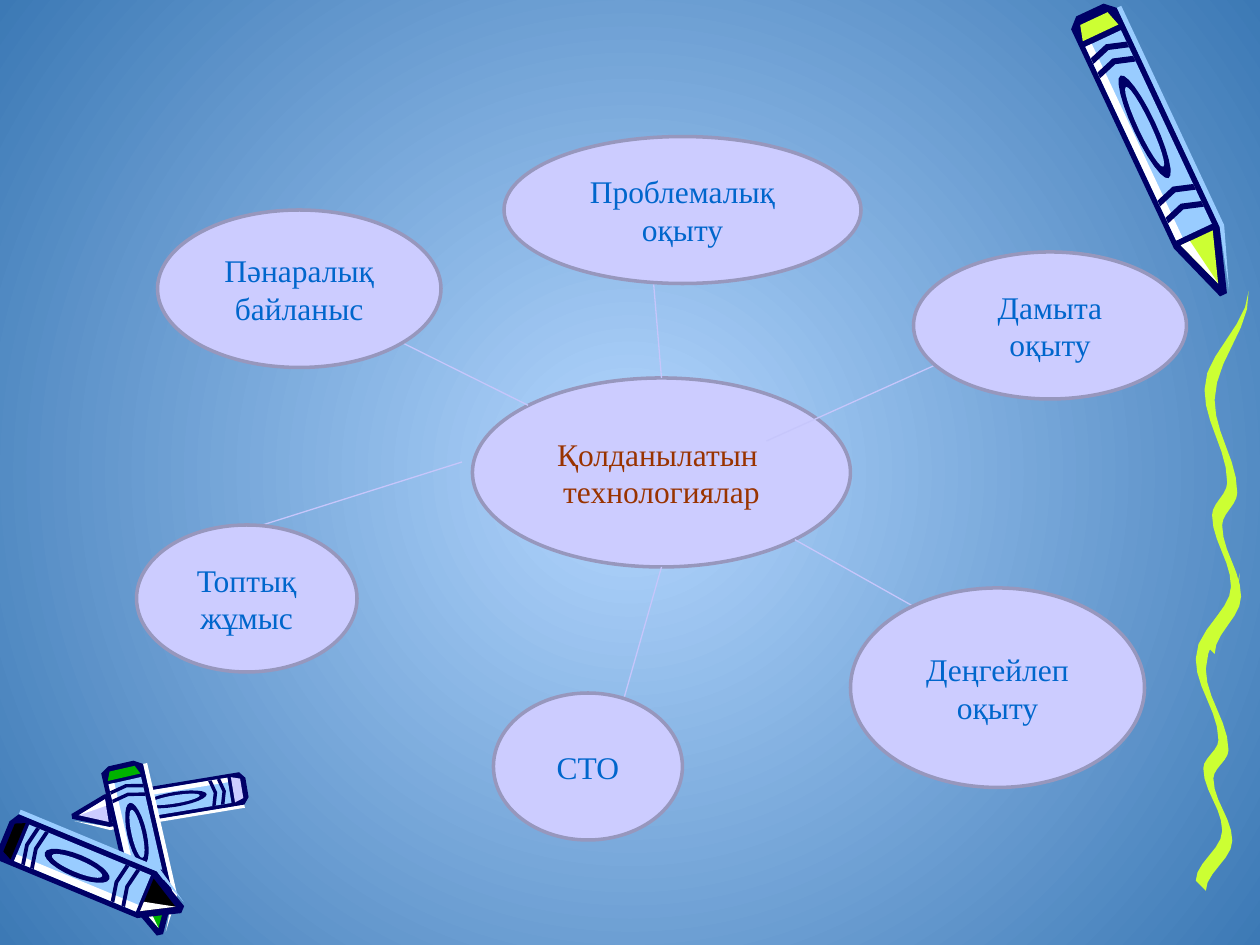
from math import cos, hypot, pi, sin

from lxml import etree
from pptx import Presentation
from pptx.dml.color import RGBColor
from pptx.enum.shapes import MSO_CONNECTOR, MSO_SHAPE
from pptx.enum.text import MSO_ANCHOR, PP_ALIGN
from pptx.oxml.ns import qn
from pptx.util import Inches, Pt

SKY_LIGHT = RGBColor(0xB4, 0xD7, 0xFF)
SKY_DARK = RGBColor(0x3C, 0x79, 0xB5)
LILAC = RGBColor(0xCC, 0xCC, 0xFF)
RIM = RGBColor(0x97, 0x97, 0xBD)
SPOKE = RGBColor(0xC6, 0xC6, 0xFB)
BROWN = RGBColor(0x99, 0x33, 0x00)
BLUE = RGBColor(0x00, 0x66, 0xCC)
NAVY = RGBColor(0x00, 0x00, 0x66)
PALE = RGBColor(0x99, 0xCC, 0xFF)
LIME = RGBColor(0xCC, 0xFF, 0x33)
GREEN = RGBColor(0x00, 0xB2, 0x00)
WHITE = RGBColor(0xFF, 0xFF, 0xFF)
BLACK = RGBColor(0x00, 0x00, 0x00)

prs = Presentation()
prs.slide_width, prs.slide_height = Inches(10), Inches(7.5)
s = prs.slides.add_slide(prs.slide_layouts[6])
CELL = prs.slide_width // 120   # diagram grid: 120 columns by 90 rows


def add_outline(points, color):
    """Filled polygon without a line; points are in inches."""
    corners = [(Inches(x), Inches(y)) for x, y in points]
    builder = s.shapes.build_freeform(*corners[0])
    builder.add_line_segments(corners[1:], close=True)
    sp = builder.convert_to_shape()
    sp.shadow.inherit = False
    sp.fill.solid()
    sp.fill.fore_color.rgb = color
    sp.line.fill.background()


def add_bubble(x, y, w, h, lines, color):
    """Ellipse placed in grid cells, with one paragraph per line."""
    sp = s.shapes.add_shape(MSO_SHAPE.OVAL, *[v * CELL for v in (x, y, w, h)])
    sp.shadow.inherit = False
    sp.fill.solid()
    sp.fill.fore_color.rgb = LILAC
    sp.line.color.rgb = RIM
    sp.line.width = Pt(2)
    tf = sp.text_frame
    tf.word_wrap = True
    tf.vertical_anchor = MSO_ANCHOR.MIDDLE
    for i, text in enumerate(lines):
        p = tf.add_paragraph() if i else tf.paragraphs[0]
        p.alignment = PP_ALIGN.CENTER
        r = p.add_run()
        r.text = text
        r.font.name = "Times New Roman"
        r.font.size = Pt(18)
        r.font.color.rgb = color


# Background: radial gradient from the centre
fill = s.background.fill
fill.gradient()
for stop, color in zip(fill.gradient_stops, (SKY_LIGHT, SKY_DARK)):
    stop.color.rgb = color
grad = s._element.find(".//" + qn("a:gradFill"))
for lin in grad.findall(qn("a:lin")):
    grad.remove(lin)
radial = etree.SubElement(grad, qn("a:path"), path="circle")
etree.SubElement(radial, qn("a:fillToRect"), l="50000", t="50000", r="50000", b="50000")

# Pencil parts: "along" runs from butt (0) to tip (1), "across" from side (-1) to side (1)
SHOULDER = 0.8                  # where the barrel ends and the nose begins
INNER = 0.78                    # half width inside the ink outline
turns = [2 * pi * i / 24 for i in range(24)]
leaf = [(0.41 + 0.18 * cos(a), 0.45 * sin(a)) for a in turns]
leaf_core = [(0.41 + 0.14 * cos(a), 0.25 * sin(a)) for a in turns]
silhouette = [(0.03, -1), (0, -0.6), (0, 0.6), (0.03, 1), (SHOULDER, 1),
              (1, 0.15), (1, -0.15), (SHOULDER, -1)]
barrel = [(0.1, -INNER), (0.1, INNER), (0.78, INNER), (0.78, -INNER)]
highlight = [(0.1, -INNER), (0.1, -0.5), (0.78, -0.5), (0.78, -INNER)]
cap = [(0.03, -0.6), (0.03, 0.6), (0.08, INNER), (0.08, -INNER)]
nose = [(SHOULDER, -0.7), (SHOULDER, 0.7), (0.96, 0)]
nose_light = [(SHOULDER, -0.7), (SHOULDER, -0.3), (0.96, 0)]
rim_light = [(0.03, 1), (0.03, 1.2), (SHOULDER, 1.2), (0.99, 0.3), (SHOULDER, 1)]
bands = [[(t, -INNER), (t - 0.02, 0), (t, INNER), (t + 0.02, INNER), (t, 0), (t + 0.02, -INNER)]
         for t in (0.14, 0.19, 0.64, 0.7)]

# Pencils from back to front: butt, tip, half width, cap colour, nose colour, rim colour
PENCILS = [
    ((8.65, 0.08), (9.71, 2.34), 0.2, LIME, LIME, PALE),
    ((1.96, 6.25), (0.57, 6.48), 0.13, LILAC, LILAC, WHITE),
    ((0.96, 6.06), (1.27, 7.42), 0.17, GREEN, GREEN, WHITE),
    ((0.03, 6.63), (1.45, 7.22), 0.2, BLACK, BLACK, PALE),
]
for (x0, y0), (x1, y1), half, cap_color, nose_color, rim_color in PENCILS:
    dx, dy = x1 - x0, y1 - y0
    side = half / hypot(dx, dy)
    parts = [(rim_light, rim_color), (silhouette, NAVY), (barrel, PALE), (highlight, WHITE),
             (cap, cap_color), (nose, nose_color), (nose_light, WHITE),
             (leaf, NAVY), (leaf_core, PALE)]
    parts += [(band, NAVY) for band in bands]
    for part, color in parts:
        # Turn the part onto the axis; positive "across" lies on the right of the big crayon
        add_outline([(x0 + along * dx + across * side * dy,
                      y0 + along * dy - across * side * dx) for along, across in part], color)

# Wavy stroke: eased swings between turning points (share of height, x), tapered at the top
SWINGS = [(0, 9.91), (0.29, 9.6), (0.55, 9.78), (0.64, 9.66), (0.84, 9.81), (1, 9.6)]
STEPS = 6
for left_shift, top, height in [(0.07, 4.55, 2.48), (0, 2.31, 2.84)]:
    left_edge, right_edge = [], []
    for (t0, xa), (t1, xb) in zip(SWINGS, SWINGS[1:]):
        for i in range(STEPS + 1):
            t = t0 + (t1 - t0) * i / STEPS
            x = xa + (xb - xa) * (1 - cos(pi * i / STEPS)) / 2 - left_shift
            half = 0.04 * min(1, 4 * t)
            left_edge.append((x - half, top + height * t - half))
            right_edge.append((x + half, top + height * t + half))
    add_outline(left_edge + right_edge[::-1], LIME)

# Central topic
add_bubble(45, 36, 36, 18, ["Қолданылатын ", "технологиялар"], BROWN)

# Spokes from the centre to each technology
for spoke in [(63, 36, 62, 24), (50.3, 38.6, 35, 31), (73, 42, 93, 33),
              (44, 44, 25, 50), (63, 54, 59, 68), (75.7, 51.4, 91, 60)]:
    line = s.shapes.add_connector(MSO_CONNECTOR.STRAIGHT, *[round(v * CELL) for v in spoke])
    line.line.color.rgb = SPOKE
    line.line.width = Pt(0.75)
    etree.SubElement(line._element.spPr, qn("a:effectLst"))

# Technologies around the centre
for x, y, w, h, text in [
    (15, 20, 27, 15, "Пәнаралық байланыс"),
    (87, 24, 26, 14, "Дамыта оқыту"),
    (47, 66, 18, 14, "СТО"),
    (81, 56, 28, 19, "Деңгейлеп оқыту"),
    (48, 13, 34, 14, "Проблемалық оқыту"),
    (13, 50, 21, 14, "Топтық жұмыс"),
]:
    add_bubble(x, y, w, h, [text], BLUE)

prs.save("out.pptx")
